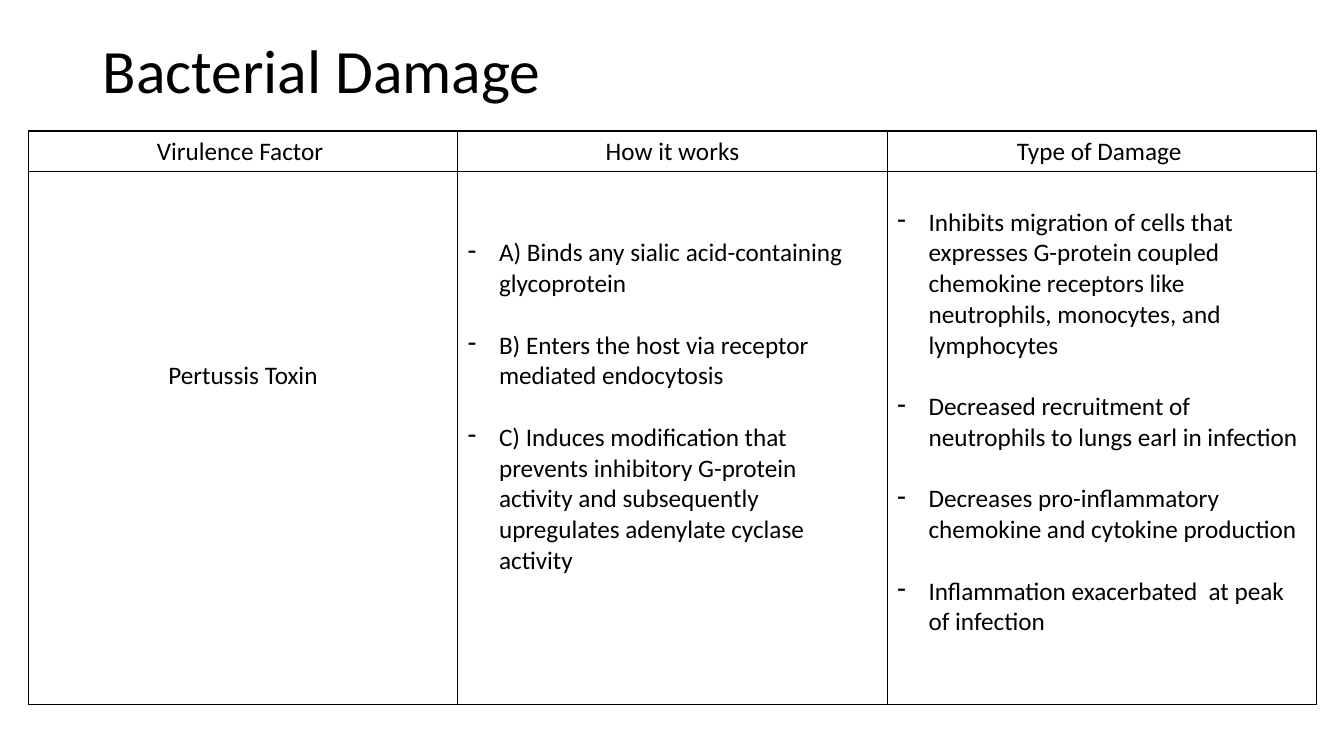
from lxml.etree import SubElement
from pptx import Presentation
from pptx.dml.color import RGBColor
from pptx.enum.text import MSO_ANCHOR as Anchor, PP_ALIGN as Align
from pptx.oxml.ns import qn
from pptx.util import Inches, Pt

WIDTH, HEIGHT = 13.33, 7.5
FONT, BLACK = "Calibri", "000000"
BODY_SIZE = 18
LINE = BODY_SIZE * 1.22  # height of one body line in points
INDENT = 0.31
COLUMN_WIDTH = 4.26
ROW_HEIGHTS = (0.39, 5.29)

HEADINGS = ("Virulence Factor ", "How it works", "Type of Damage ")
# Each body cell: lines left free at the top, dashed list or not, paragraphs
BODY = (
    (6, False, ["Pertussis Toxin"]),
    (2, True, [
        "A) Binds any sialic acid-containing glycoprotein ",
        "B) Enters the host via receptor mediated endocytosis",
        "C) Induces modification that prevents inhibitory G-protein  activity "
        "and subsequently upregulates adenylate cyclase activity ",
    ]),
    (1, True, [
        "Inhibits migration of cells that expresses G-protein coupled "
        "chemokine receptors like neutrophils, monocytes, and lymphocytes ",
        "Decreased recruitment of neutrophils to lungs earl in infection ",
        "Decreases pro-inflammatory chemokine and cytokine production",
        "Inflammation exacerbated  at peak of infection ",
    ]),
)


def color(hex_string):
    """Turn a hex string into a colour."""
    return RGBColor.from_string(hex_string)


def write(para, text, size):
    """Fill a paragraph and format its runs."""
    para.text = text
    for span in para.runs:
        span.font.name = FONT
        span.font.size = Pt(size)
        span.font.color.rgb = color(BLACK)


def add_dash(para):
    """Give a paragraph a dash bullet with a hanging indent."""
    properties = para._p.get_or_add_pPr()
    properties.set("marL", str(Inches(INDENT)))
    properties.set("indent", str(-Inches(INDENT)))
    SubElement(properties, qn("a:buFontTx"))
    SubElement(properties, qn("a:buChar"), char="-")


def add_borders(cell):
    """Draw a thin black line on every side of a cell."""
    properties = cell._tc.get_or_add_tcPr()
    for index, side in enumerate(("lnL", "lnR", "lnT", "lnB")):
        line = SubElement(properties, qn("a:" + side), w=str(Pt(1)))
        fill = SubElement(line, qn("a:solidFill"))
        SubElement(fill, qn("a:srgbClr"), val=BLACK)
        properties.insert(index, line)


def fill_cell(cell, paragraphs, free_lines=0, dashed=False):
    """Write paragraphs into a bordered cell, below some free lines."""
    cell.fill.background()
    add_borders(cell)
    cell.margin_top = Inches(0.05) + Pt(free_lines * LINE)
    frame = cell.text_frame
    for index, text in enumerate(paragraphs):
        para = frame.add_paragraph() if index else frame.paragraphs[0]
        write(para, text, BODY_SIZE)
        para.alignment = Align.LEFT if dashed else Align.CENTER
        if index:
            para.space_before = Pt(LINE)
        if dashed:
            add_dash(para)


def add_title(page, text):
    """Add the title, vertically centred in its box."""
    box = page.shapes.add_textbox(
        Inches(0.92), 0, Inches(11.5), Inches(1.45))
    frame = box.text_frame
    frame.word_wrap = True
    frame.vertical_anchor = Anchor.MIDDLE
    para = frame.paragraphs[0]
    write(para, text, 44)
    para.line_spacing = 0.9


def add_damage_table(page):
    """Add the table of virulence factors with equal columns."""
    count = len(HEADINGS)
    table = page.shapes.add_table(
        len(ROW_HEIGHTS), count, Inches(0.28), Inches(1.3),
        Inches(COLUMN_WIDTH * count), Inches(sum(ROW_HEIGHTS))).table
    table.first_row = table.horz_banding = False
    for row, height in zip(table.rows, ROW_HEIGHTS):
        row.height = Inches(height)
    for index, (heading, body) in enumerate(zip(HEADINGS, BODY)):
        free_lines, dashed, paragraphs = body
        table.columns[index].width = Inches(COLUMN_WIDTH)
        fill_cell(table.cell(0, index), [heading])
        fill_cell(table.cell(1, index), paragraphs, free_lines, dashed)


def main():
    """Build and save the slide."""
    deck = Presentation()
    deck.slide_width, deck.slide_height = Inches(WIDTH), Inches(HEIGHT)
    page = deck.slides.add_slide(deck.slide_layouts[6])
    add_title(page, "Bacterial Damage ")
    add_damage_table(page)
    deck.save("out.pptx")


main()
